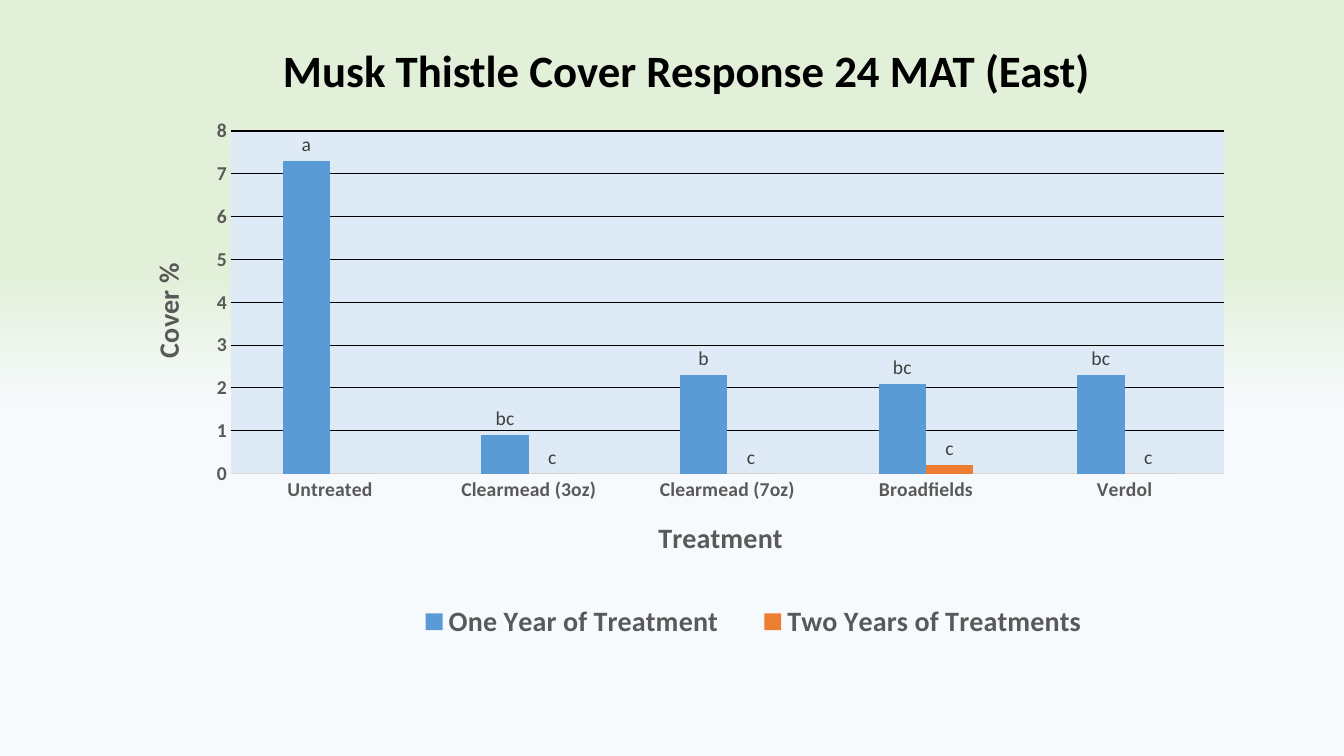
from lxml import etree
from pptx import Presentation
from pptx.chart.data import CategoryChartData
from pptx.dml.color import RGBColor
from pptx.enum.chart import (XL_CHART_TYPE, XL_LABEL_POSITION as LabelPos,
                             XL_LEGEND_POSITION as LegendPos, XL_TICK_MARK as Tick)
from pptx.enum.text import MSO_ANCHOR, PP_ALIGN
from pptx.oxml import parse_xml
from pptx.oxml.ns import nsdecls, qn
from pptx.util import Inches, Pt

FONT = "Calibri"
CHART_WIDTH, CHART_HEIGHT = Inches(11.5), Inches(5.81)
TREATMENTS = ["Untreated", "Clearmead (3oz)", "Clearmead (7oz)", "Broadfields", "Verdol"]
SERIES = [
    ("One Year of Treatment", [7.3, 0.9, 2.3, 2.1, 2.3], "5B9BD5",
     ["a", "bc", "b", "bc", "bc"]),
    ("Two Years of Treatments", [0, 0, 0, 0.2, 0], "ED7D31",
     ["", "c", "c", "c", "c"]),
]


def rgb(value):
    """Turn a hex string into a colour."""
    return RGBColor.from_string(value)


def style(font, size, color, bold=True):
    """Set the face, size, colour and weight of a font."""
    font.name, font.size, font.bold = FONT, Pt(size), bold
    font.color.rgb = rgb(color)


def place(element, index, left, top, width=None, height=None, inner=False):
    """Give a chart part a manual layout, with lengths in inches within the chart."""
    for old in element.findall(qn("c:layout")):
        element.remove(old)
    layout = parse_xml(f"<c:layout {nsdecls('c')}><c:manualLayout/></c:layout>")
    settings = [("layoutTarget", "inner")] if inner else []
    settings += [("xMode", "edge"), ("yMode", "edge"),
                 ("x", Inches(left) / CHART_WIDTH), ("y", Inches(top) / CHART_HEIGHT)]
    if width is not None:
        settings += [("w", Inches(width) / CHART_WIDTH), ("h", Inches(height) / CHART_HEIGHT)]
    for tag, value in settings:
        etree.SubElement(layout[0], qn(f"c:{tag}")).set("val", str(value))
    element.insert(index, layout)


def paint_background(slide):
    """Fill the background with a vertical green to pale blue gradient."""
    fill = slide.background.fill
    fill.gradient()
    fill.gradient_angle = 270
    for stop, (position, color) in zip(fill.gradient_stops,
                                       [(0.36, "E2F0D9"), (0.54, "F7FAFD")]):
        stop.position = position
        stop.color.rgb = rgb(color)


def add_heading(slide, text):
    """Fill and position the title placeholder."""
    heading = slide.shapes.title
    heading.left, heading.top = Inches(1.06), Inches(0)
    heading.width, heading.height = Inches(11.5), Inches(1.45)
    frame = heading.text_frame
    frame.text = text
    frame.vertical_anchor = MSO_ANCHOR.MIDDLE
    paragraph = frame.paragraphs[0]
    paragraph.alignment = PP_ALIGN.CENTER
    paragraph.line_spacing = 0.9
    style(paragraph.runs[0].font, 32, "000000")


def format_axis(axis, text, left, top, rotation):
    """Style the tick labels of an axis and place its title."""
    axis.major_tick_mark = axis.minor_tick_mark = Tick.NONE
    style(axis.tick_labels.font, 14, "595959")
    frame = axis.axis_title.text_frame
    frame.text = text
    style(frame.paragraphs[0].runs[0].font, 20, "595959")
    body = axis.axis_title._element.find(f".//{qn('a:bodyPr')}")
    body.set("rot", str(rotation * 60000))
    body.set("vert", "horz")
    place(axis.axis_title._element, 1, left, top)


def format_series(series, color, letters):
    """Colour a series and label its columns with significance letters."""
    series.format.fill.solid()
    series.format.fill.fore_color.rgb = rgb(color)
    for index, letter in enumerate(letters):
        if letter:
            label = series.points[index].data_label
            label.text_frame.text = letter
            style(label.text_frame.paragraphs[0].runs[0].font, 14, "404040", False)
            label.position = LabelPos.OUTSIDE_END


def add_cover_chart(slide):
    """Add the clustered column chart of thistle cover by treatment."""
    cover = CategoryChartData()
    cover.categories = TREATMENTS
    for name, values, _, _ in SERIES:
        cover.add_series(name, values)
    chart = slide.shapes.add_chart(XL_CHART_TYPE.COLUMN_CLUSTERED, Inches(0.98), Inches(0.72),
                                   CHART_WIDTH, CHART_HEIGHT, cover).chart
    chart.has_title = False
    style(chart.font, 10, "000000", False)

    plot = chart.plots[0]
    plot.gap_width, plot.overlap, plot.vary_by_categories = 219, 0, False
    for series, (_, _, color, letters) in zip(plot.series, SERIES):
        format_series(series, color, letters)

    format_axis(chart.category_axis, "Treatment", 5.5, 4.37, 0)
    chart.category_axis.format.line.color.rgb = rgb("D9D9D9")
    chart.category_axis.format.line.width = Pt(0.75)

    percent = chart.value_axis
    format_axis(percent, "Cover %", 0.44, 1.84, -90)
    percent.minimum_scale, percent.maximum_scale, percent.major_unit = 0, 8, 1
    percent.format.line.fill.background()
    percent.major_gridlines.format.line.color.rgb = rgb("000000")
    percent.major_gridlines.format.line.width = Pt(0.75)

    chart.has_legend = True
    chart.legend.position = LegendPos.BOTTOM
    chart.legend.include_in_layout = False
    style(chart.legend.font, 20, "595959")
    place(chart.legend._element, 1, 2.88, 5.22, 7.23, 0.46)

    plot_area = chart._chartSpace.chart.plotArea
    place(plot_area, 0, 1.31, 0.58, 9.85, 3.4, inner=True)
    plot_area.append(parse_xml(
        f"<c:spPr {nsdecls('c', 'a')}><a:solidFill><a:srgbClr val='DEEBF7'/></a:solidFill>"
        "<a:ln><a:noFill/></a:ln></c:spPr>"))


def main():
    """Build the slide and save it."""
    deck = Presentation()
    deck.slide_width, deck.slide_height = Inches(13.33), Inches(7.5)
    slide = deck.slides.add_slide(deck.slide_layouts[5])
    paint_background(slide)
    add_heading(slide, "Musk Thistle Cover Response 24 MAT (East)")
    add_cover_chart(slide)
    deck.save("out.pptx")


if __name__ == "__main__":
    main()
